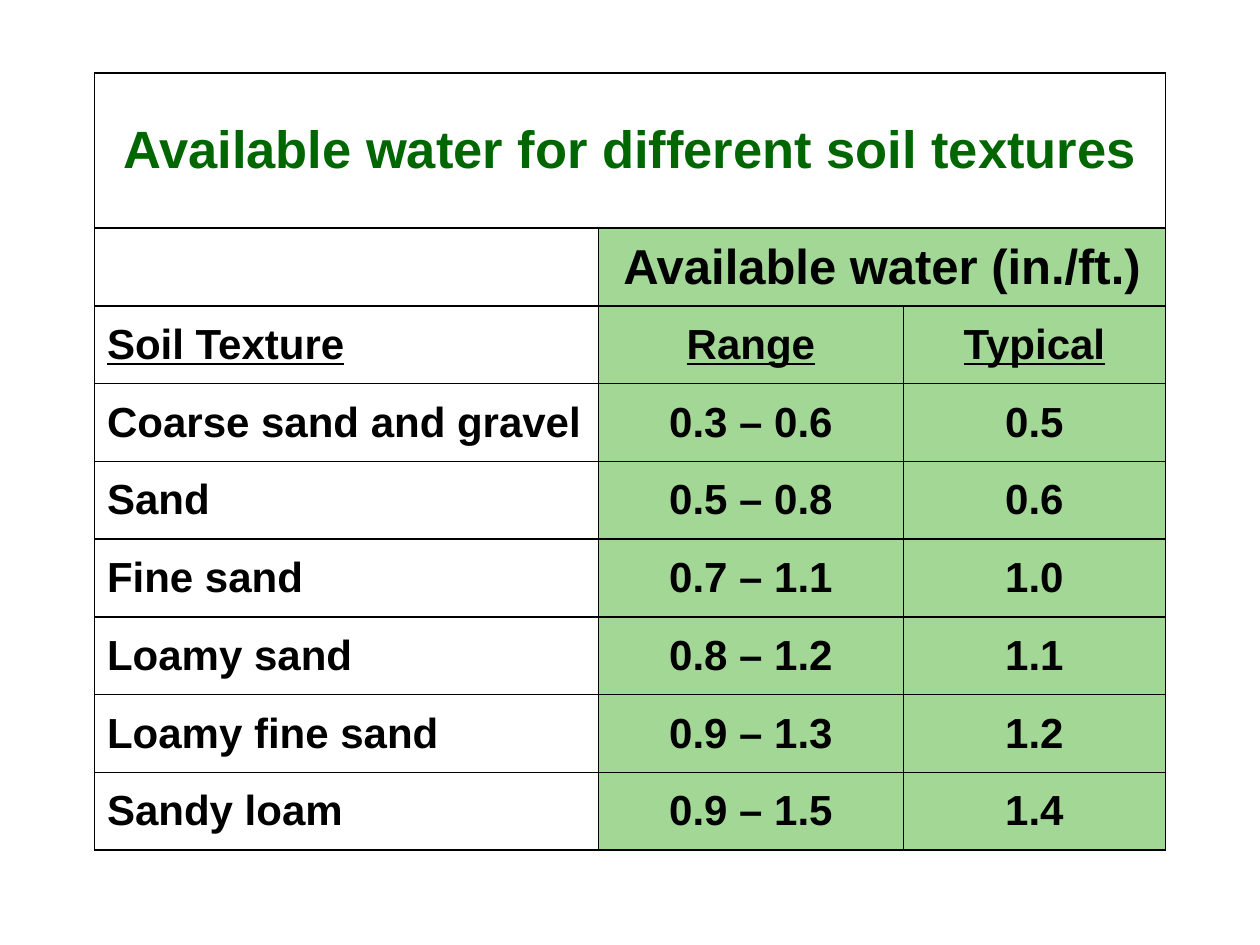
from dataclasses import dataclass

from lxml import etree
from pptx import Presentation
from pptx import util as u
from pptx.dml.color import RGBColor
from pptx.enum import text
from pptx.oxml import ns


@dataclass(frozen=True)
class Theme:
    font: str = "Arial"
    title_color: str = "006600"
    ink: str = "000000"
    shade: str = "A2D795"
    title_size: int = 30
    group_size: int = 28
    body_size: int = 24
    border: float = 1


@dataclass(frozen=True)
class Entry:
    row: int
    column: int
    words: str
    size: int = Theme.body_size
    color: str = Theme.ink
    underline: bool = False
    span: int = 1


THEME = Theme()
SLIDE_WIDTH, SLIDE_HEIGHT = u.Inches(10), u.Inches(7.5)

# Grid: column widths in inches, row heights in equal units
COLUMNS = (4, 2.42, 2.08)
ROW_UNITS = (2,) + (1,) * 8
ROW_HEIGHT = 0.617
LEFT_SHARE, TOP_SHARE = 0.075, 0.077

HEADINGS = ("Soil Texture", "Range", "Typical")
SOILS = (
    ("Coarse sand and gravel", "0.3 – 0.6", "0.5"),
    ("Sand", "0.5 – 0.8", "0.6"),
    ("Fine sand", "0.7 – 1.1", "1.0"),
    ("Loamy sand", "0.8 – 1.2", "1.1"),
    ("Loamy fine sand", "0.9 – 1.3", "1.2"),
    ("Sandy loam", "0.9 – 1.5", "1.4"),
)


def add_borders(cell) -> None:
    properties = cell._tc.get_or_add_tcPr()
    for side in ("a:lnL", "a:lnR", "a:lnT", "a:lnB"):
        line = etree.SubElement(properties, ns.qn(side), w=str(u.Pt(THEME.border)))
        fill = etree.SubElement(line, ns.qn("a:solidFill"))
        etree.SubElement(fill, ns.qn("a:srgbClr"), val=THEME.ink)


def style_cell(cell, shaded: bool) -> None:
    add_borders(cell)
    cell.vertical_anchor = text.MSO_ANCHOR.MIDDLE
    if shaded:
        cell.fill.solid()
        cell.fill.fore_color.rgb = RGBColor.from_string(THEME.shade)
    else:
        cell.fill.background()


def write_entry(table, entry: Entry) -> None:
    cell = table.cell(entry.row, entry.column)
    if entry.span > 1:
        cell.merge(table.cell(entry.row, entry.column + entry.span - 1))
    cell.text = entry.words
    para = cell.text_frame.paragraphs[0]
    centered = entry.column > 0 or entry.span > 1
    para.alignment = text.PP_ALIGN.CENTER if centered else text.PP_ALIGN.LEFT
    para.font.name = THEME.font
    para.font.size = u.Pt(entry.size)
    para.font.bold = True
    para.font.underline = entry.underline
    para.font.color.rgb = RGBColor.from_string(entry.color)


def add_soil_table(page):
    frame = page.shapes.add_table(
        len(ROW_UNITS), len(COLUMNS),
        int(SLIDE_WIDTH * LEFT_SHARE), int(SLIDE_HEIGHT * TOP_SHARE),
        u.Inches(sum(COLUMNS)), u.Inches(sum(ROW_UNITS) * ROW_HEIGHT))
    table = frame.table
    table.first_row = table.horz_banding = False
    for column, width in zip(table.columns, COLUMNS):
        column.width = u.Inches(width)
    for row, units in zip(table.rows, ROW_UNITS):
        row.height = u.Inches(units * ROW_HEIGHT)
    for r in range(len(ROW_UNITS)):
        for c in range(len(COLUMNS)):
            style_cell(table.cell(r, c), shaded=r > 0 and c > 0)
    return table


def main() -> None:
    deck = Presentation()
    deck.slide_width, deck.slide_height = SLIDE_WIDTH, SLIDE_HEIGHT
    # The title is a table row, so the blank layout fits
    page = deck.slides.add_slide(deck.slide_layouts[6])
    table = add_soil_table(page)

    # Title row and group heading
    entries = [
        Entry(0, 0, "Available water for different soil textures",
              THEME.title_size, THEME.title_color, span=3),
        Entry(1, 1, "Available water (in./ft.)", THEME.group_size, span=2),
    ]
    # Column headings, then one row per soil
    for r, row in enumerate((HEADINGS,) + SOILS, start=2):
        entries += [Entry(r, c, words, underline=row is HEADINGS)
                    for c, words in enumerate(row)]
    for entry in entries:
        write_entry(table, entry)

    deck.save("out.pptx")


if __name__ == "__main__":
    main()
